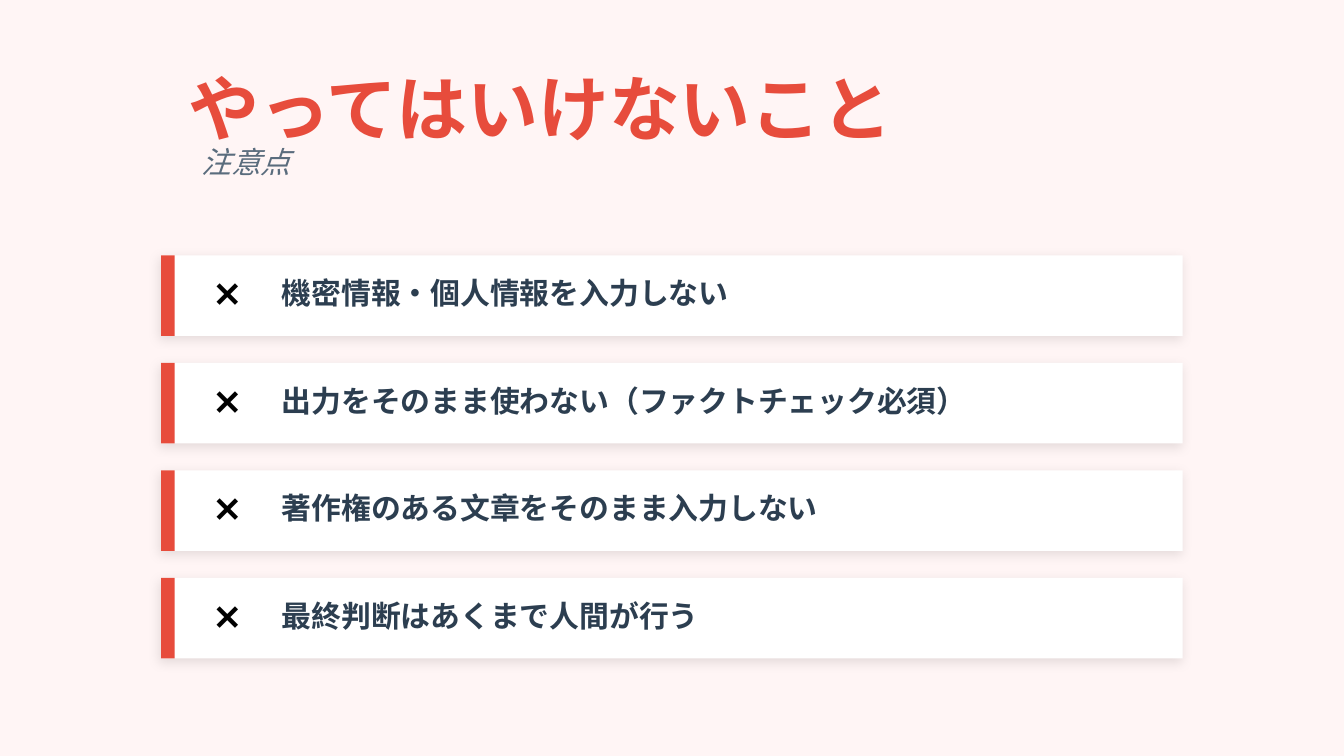
from lxml import etree
from pptx import Presentation
from pptx.dml.color import RGBColor
from pptx.enum.shapes import MSO_SHAPE
from pptx.enum.text import MSO_ANCHOR
from pptx.oxml.ns import qn
from pptx.util import Pt

RECT = MSO_SHAPE.RECTANGLE
MIDDLE = MSO_ANCHOR.MIDDLE
FONT = "Calibri"
COLORS = {
    "back": "FFF5F5",
    "red": "E74C3C",
    "gray": "5A6C7D",
    "navy": "2C3E50",
    "black": "000000",
    "white": "FFFFFF",
}
RULES = [
    "機密情報・個人情報を入力しない",
    "出力をそのまま使わない（ファクトチェック必須）",
    "著作権のある文章をそのまま入力しない",
    "最終判断はあくまで人間が行う",
]


def rgb(name):
    return RGBColor.from_string(COLORS[name])


def add_text(slide, box, text, size, color, bold=False, italic=False, inset=True):
    shape = slide.shapes.add_textbox(*map(Pt, box))
    frame = shape.text_frame
    frame.word_wrap = True
    frame.vertical_anchor = MIDDLE
    if not inset:
        frame.margin_left = frame.margin_right = 0
        frame.margin_top = frame.margin_bottom = 0
    frame.text = text
    font = frame.paragraphs[0].runs[0].font
    font.name = FONT
    font.size = Pt(size)
    font.bold = bold
    font.italic = italic
    font.color.rgb = rgb(color)


def add_rect(slide, box, color):
    shape = slide.shapes.add_shape(RECT, *map(Pt, box))
    shape.fill.solid()
    shape.fill.fore_color.rgb = rgb(color)
    shape.line.fill.background()
    shape.shadow.inherit = False
    return shape


def add_shadow(shape):
    """Cast a soft black shadow: 6 pt blur, 2 pt away, 10% opaque."""
    effects = shape._element.spPr.find(qn("a:effectLst"))
    outer = etree.SubElement(
        effects, qn("a:outerShdw"), blurRad=str(Pt(6)), dist=str(Pt(2)),
        dir=str(135 * 60000), algn="bl", rotWithShape="0")
    tint = etree.SubElement(outer, qn("a:srgbClr"), val=COLORS["black"])
    etree.SubElement(tint, qn("a:alpha"), val="10000")


def add_header(slide, box):
    left, top, width, height = box
    add_text(slide, (left, top, width, 43.2), "やってはいけないこと", 38, "red",
             bold=True, inset=False)
    add_text(slide, (left, top + 36, width, height - 36), "注意点", 16, "gray",
             italic=True)


def add_card(slide, box, text):
    left, top, width, height = box
    add_shadow(add_rect(slide, box, "white"))
    add_rect(slide, (left, top, 7.2, height), "red")
    line = top + 5.76
    add_text(slide, (left + 21.6, line, 28.8, 28.8), "❌", 20, "black")
    add_text(slide, (left + 57.6, line, width - 79.2, 28.8), text, 16, "navy",
             bold=True)


def add_cards(slide, box, gap):
    left, top, width, height = box
    tall = (height - gap * (len(RULES) - 1)) / len(RULES)
    for i, rule in enumerate(RULES):
        add_card(slide, (left, top + i * (tall + gap), width, tall), rule)


def main():
    deck = Presentation()
    deck.slide_width = Pt(720)
    deck.slide_height = Pt(405)
    slide = deck.slides.add_slide(deck.slide_layouts[6])
    slide.background.fill.solid()
    slide.background.fill.fore_color.rgb = rgb("back")
    add_header(slide, (100.8, 36, 568.8, 64.8))
    add_cards(slide, (86.4, 136.8, 547.2, 216), gap=14.4)
    deck.save("out.pptx")


if __name__ == "__main__":
    main()
